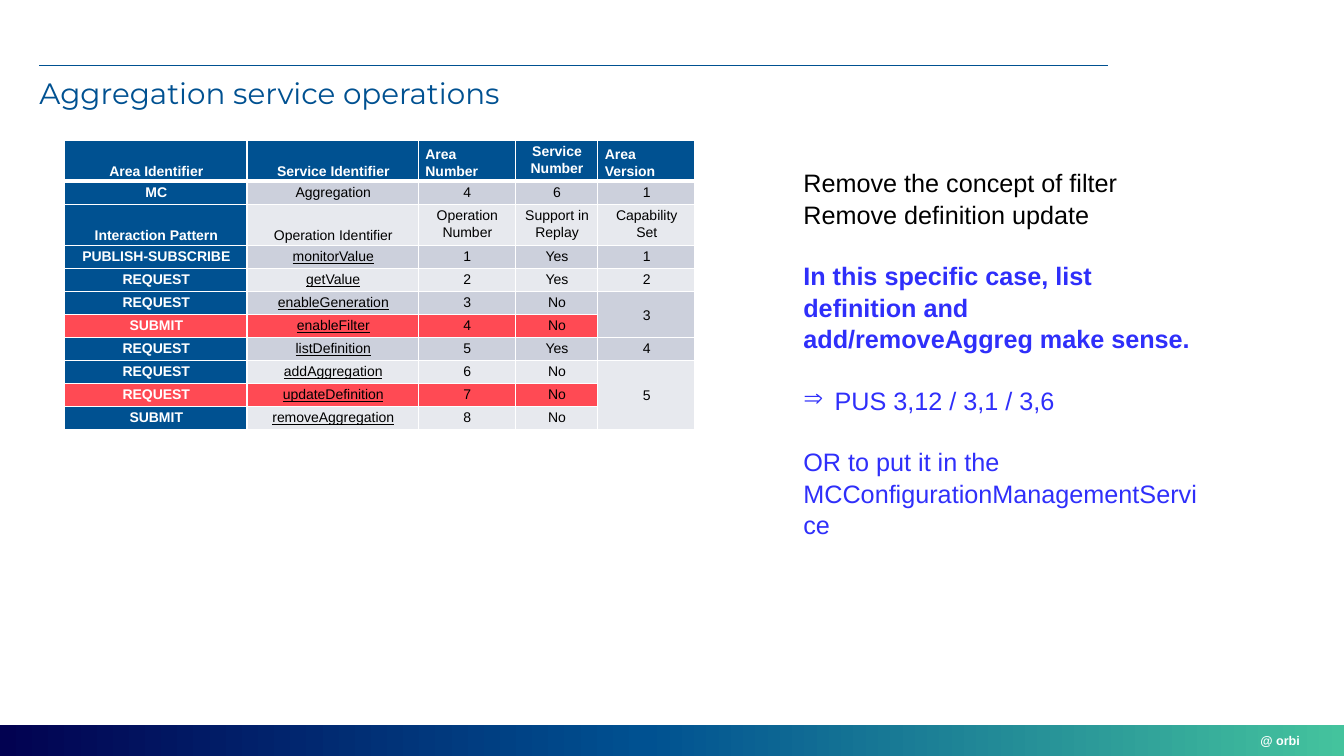
from lxml import etree
from pptx import Presentation
from pptx import util as u
from pptx.dml.color import RGBColor
from pptx.enum import shapes, text
from pptx.oxml.ns import qn

NAVY = RGBColor(0x02, 0x02, 0x51)
BLUE = RGBColor(0x00, 0x51, 0x91)
GREEN = RGBColor(0x44, 0xC3, 0x9D)
RED = RGBColor(0xFF, 0x4A, 0x54)
DARK_BAND = RGBColor(0xCC, 0xD0, 0xDC)
LIGHT_BAND = RGBColor(0xE7, 0xE9, 0xEE)
VIOLET = RGBColor(0x2F, 0x2F, 0xFA)
WHITE = RGBColor(0xFF, 0xFF, 0xFF)
BLACK = RGBColor(0, 0, 0)

COLUMN_WIDTHS = [1.81, 1.7, 0.96, 0.82, 0.96]
ROW_HEIGHTS = [0.36, 0.22, 0.36, 0.22] + [0.21] * 7
ROWS = [
    ["Area Identifier", "Service Identifier", "Area Number", "Service\nNumber", "Area Version"],
    ["MC", "Aggregation", "4", "6", "1"],
    ["Interaction Pattern", "Operation Identifier", "Operation Number", "Support in Replay", "Capability Set"],
    ["PUBLISH-SUBSCRIBE", "monitorValue", "1", "Yes", "1"],
    ["REQUEST", "getValue", "2", "Yes", "2"],
    ["REQUEST", "enableGeneration", "3", "No", "3"],
    ["SUBMIT", "enableFilter", "4", "No", ""],
    ["REQUEST", "listDefinition", "5", "Yes", "4"],
    ["REQUEST", "addAggregation", "6", "No", "5"],
    ["REQUEST", "updateDefinition", "7", "No", ""],
    ["SUBMIT", "removeAggregation", "8", "No", ""],
]
DARK_ROWS = {1, 3, 5, 7}
REMOVED_ROWS = {6, 9}
MERGED_ROWS = [(5, 6), (8, 10)]  # capability sets shared by several operations
FIRST_OPERATION_ROW = 3

NOTES = [  # text, colour, bold, space before in points, bullet
    ("Remove the concept of filter", BLACK, False, 0, None),
    ("Remove definition update", BLACK, False, 0, None),
    ("In this specific case, list definition and add/removeAggreg make sense.", VIOLET, True, 21.6, None),
    ("PUS 3,12 / 3,1 / 3,6", VIOLET, False, 21.6, "⇒"),
    ("OR to put it in the MCConfigurationManagementService", VIOLET, False, 21.6, None),
]


def set_font(paragraph, size, color, bold=False, name="Arial"):
    font = paragraph.font
    font.name, font.size, font.bold = name, u.Pt(size), bold
    font.color.rgb = color


def add_text_box(slide, left, top, width, height, inset=0.0, wrap=True):
    box = slide.shapes.add_textbox(u.Inches(left), u.Inches(top), u.Inches(width), u.Inches(height))
    frame = box.text_frame
    frame.word_wrap = wrap
    frame.margin_left = frame.margin_right = u.Inches(inset)
    frame.margin_top = frame.margin_bottom = u.Inches(inset / 2)
    return frame


def add_footer(slide):
    bar = slide.shapes.add_shape(shapes.MSO_SHAPE.RECTANGLE, 0, u.Inches(7.19), u.Inches(13.33), u.Inches(0.31))
    bar.shadow.inherit = False
    bar.line.fill.background()
    bar.fill.gradient()
    bar.fill.gradient_angle = 0
    stops = bar._element.spPr.find(qn("a:gradFill")).find(qn("a:gsLst"))
    for stop in list(stops):
        stops.remove(stop)
    for percent, color in ((0, NAVY), (48, BLUE), (100, GREEN)):
        stop = etree.SubElement(stops, qn("a:gs"), pos=str(percent * 1000))
        etree.SubElement(stop, qn("a:srgbClr"), val=str(color))

    frame = add_text_box(slide, 12.5, 7.27, 0.45, 0.15, wrap=False)
    frame.vertical_anchor = text.MSO_ANCHOR.MIDDLE
    frame.text = "@ orbi"
    set_font(frame.paragraphs[0], 9, WHITE, bold=True)


def add_title(slide, title):
    rule = slide.shapes.add_connector(
        shapes.MSO_CONNECTOR.STRAIGHT, u.Inches(0.39), u.Inches(0.65), u.Inches(10.99), u.Inches(0.65))
    rule.line.color.rgb = BLUE
    rule.line.width = u.Pt(1)
    etree.SubElement(rule._element.spPr, qn("a:effectLst"))

    frame = add_text_box(slide, 0.39, 0.78, 12.55, 0.32)
    frame.text = title
    frame.paragraphs[0].line_spacing = 0.9
    set_font(frame.paragraphs[0], 21, BLUE, name="Montserrat")


def set_borders(cell, top, bottom):
    properties = cell._tc.get_or_add_tcPr()
    for side, points in (("L", 1), ("R", 1), ("T", top), ("B", bottom)):
        line = etree.SubElement(properties, qn(f"a:ln{side}"), w=str(u.Pt(points)))
        fill = etree.SubElement(line, qn("a:solidFill"))
        etree.SubElement(fill, qn("a:srgbClr"), val=str(WHITE))


def cell_fill(row, column):
    if row in REMOVED_ROWS and column < 4:
        return RED
    if row == 0 or column == 0:
        return BLUE
    return DARK_BAND if row in DARK_ROWS else LIGHT_BAND


def fill_cell(cell, row, column, content):
    heading = row == 0 or column == 0
    set_borders(cell, 3 if row == 1 else 1, 3 if row == 0 else 1)
    cell.fill.solid()
    cell.fill.fore_color.rgb = cell_fill(row, column)
    cell.margin_left, cell.margin_right = u.Inches(0.07), u.Inches(0.06)
    cell.margin_top, cell.margin_bottom = u.Inches(0.03), u.Inches(0.02)
    if (row == 0 and column != 3) or (row == 2 and column < 2):
        cell.vertical_anchor = text.MSO_ANCHOR.BOTTOM
    cell.text = content
    left_aligned = row == 0 and column in (2, 4)
    for paragraph in cell.text_frame.paragraphs:
        paragraph.alignment = text.PP_ALIGN.LEFT if left_aligned else text.PP_ALIGN.CENTER
        paragraph.line_spacing = 1.07
        set_font(paragraph, 10, WHITE if heading else BLACK, bold=heading)
        if column == 1 and row >= FIRST_OPERATION_ROW:
            paragraph.font.underline = True


def add_operations_table(slide):
    table = slide.shapes.add_table(
        len(ROWS), len(COLUMN_WIDTHS), u.Inches(0.64), u.Inches(1.39),
        u.Inches(sum(COLUMN_WIDTHS)), u.Inches(sum(ROW_HEIGHTS))).table
    table.first_row = table.horz_banding = False
    for column, width in zip(table.columns, COLUMN_WIDTHS):
        column.width = u.Inches(width)
    for row, height in zip(table.rows, ROW_HEIGHTS):
        row.height = u.Inches(height)
    for row, contents in enumerate(ROWS):
        for column, content in enumerate(contents):
            fill_cell(table.cell(row, column), row, column, content)
    for first, last in MERGED_ROWS:
        table.cell(first, 4).merge(table.cell(last, 4))
        table.cell(first, 4).vertical_anchor = text.MSO_ANCHOR.MIDDLE


def add_bullet(paragraph, character):
    properties = paragraph._p.get_or_add_pPr()
    properties.set("marL", str(u.Inches(0.31)))
    properties.set("indent", str(-u.Inches(0.31)))
    etree.SubElement(properties, qn("a:buChar"), char=character)


def add_notes(slide):
    frame = add_text_box(slide, 7.87, 1.6, 4.16, 4.04, inset=0.1)
    for index, (content, color, bold, gap, bullet) in enumerate(NOTES):
        paragraph = frame.add_paragraph() if index else frame.paragraphs[0]
        paragraph.text = content
        if bullet:
            add_bullet(paragraph, bullet)
        paragraph.line_spacing = 1.04
        if gap:
            paragraph.space_before = u.Pt(gap)
        set_font(paragraph, 18, color, bold)


def main():
    presentation = Presentation()
    presentation.slide_width, presentation.slide_height = u.Inches(13.33), u.Inches(7.5)
    slide = presentation.slides.add_slide(presentation.slide_layouts[6])
    add_footer(slide)
    add_title(slide, "Aggregation service operations")
    add_operations_table(slide)
    add_notes(slide)
    presentation.save("out.pptx")


if __name__ == "__main__":
    main()
